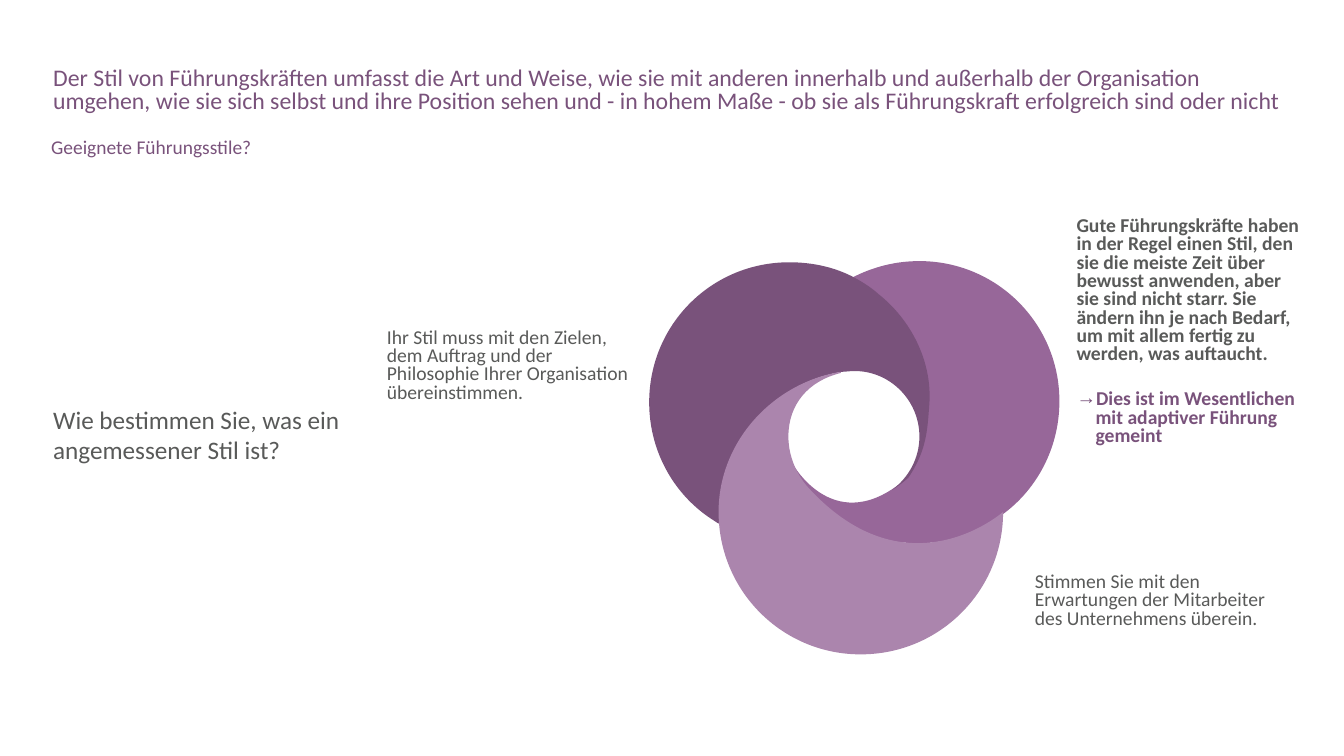
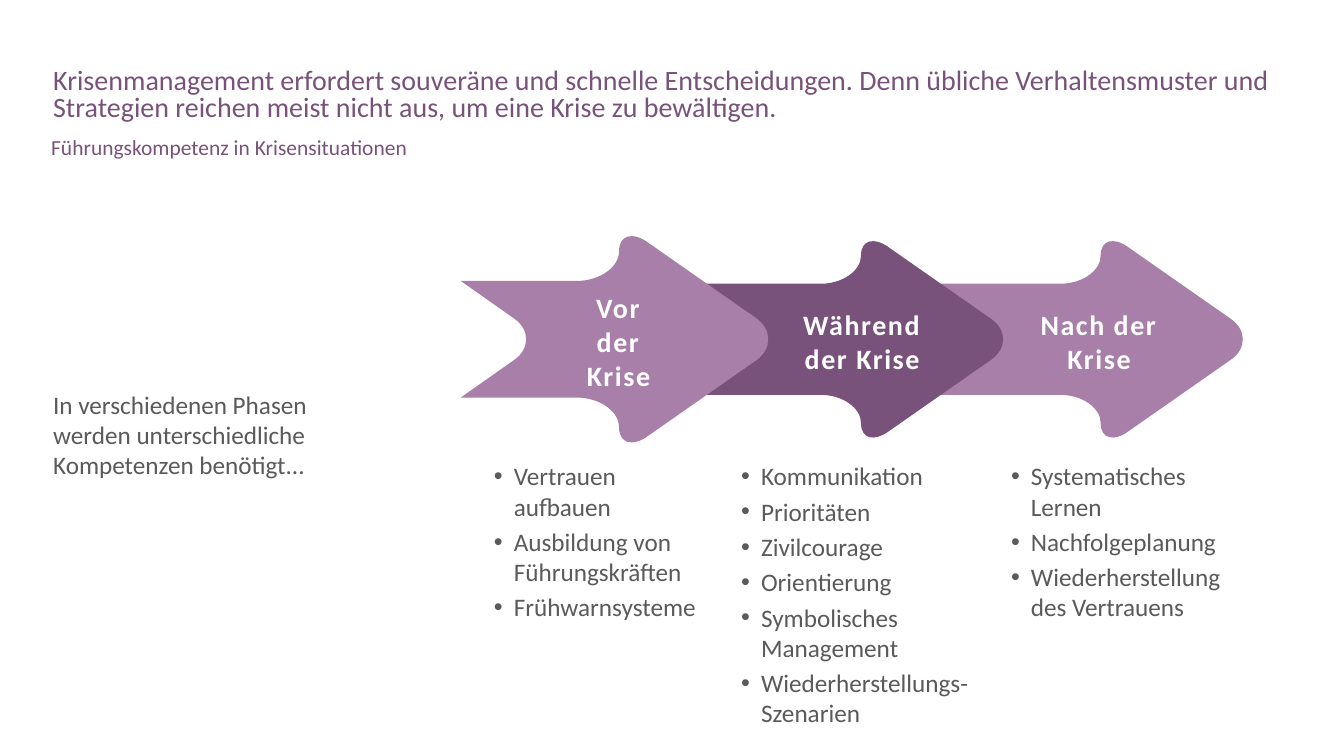
from lxml import etree
from pptx import Presentation
from pptx import util as u
from pptx.dml import color
from pptx.enum import text
from pptx.oxml import ns

FONT = "Calibri"
COLORS = {
    "dark": "79527B",
    "medium": "976799",
    "light": "AB85AD",
    "arrow": "A77FA9",
    "body": "595A59",
    "white": "FFFFFF",
}
SWIRL = [
    ("medium", (6.81, 0), [
        [(6.2, 0), (5.64, 0.15), (5.13, 0.41)],
        [(5.36, 0.53), (5.56, 0.66), (5.77, 0.84)],
        [(6.55, 1.47), (7.11, 2.51), (7.04, 3.61)],
        [(6.99, 4.22), (7.01, 4.75), (6.5, 5.46)],
        [(4.7, 7.04), (3.63, 5.13), (3.63, 5.13)],
        [(3.81, 6.15), (5.08, 6.73), (5.08, 6.73)],
        [(5.56, 6.99), (6.22, 7.11), (6.81, 7.11)],
        [(7.49, 7.11), (8.15, 6.88), (8.69, 6.53)],
        [(9.68, 5.92), (10.34, 4.8), (10.34, 3.53)],
        [(10.34, 1.57), (8.76, 0), (6.81, 0)],
    ]),
    ("dark", (4.85, 2.79), [
        [(4.95, 2.79), (5.05, 2.77), (5.18, 2.77)],
        [(6.07, 2.77), (6.81, 3.51), (6.81, 4.42)],
        [(6.81, 4.98), (6.53, 5.46), (6.12, 5.77)],
        [(6.25, 5.69), (6.38, 5.59), (6.53, 5.46)],
        [(7.01, 4.75), (7.01, 4.22), (7.06, 3.61)],
        [(7.14, 2.51), (6.58, 1.47), (5.79, 0.84)],
        [(5.59, 0.66), (5.38, 0.53), (5.16, 0.41)],
        [(4.67, 0.15), (4.11, 0.03), (3.53, 0.03)],
        [(1.57, 0.03), (0, 1.6), (0, 3.56)],
        [(0, 4.83), (0.66, 5.94), (1.65, 6.55)],
        [(1.7, 6.58), (1.75, 6.63), (1.8, 6.63)],
        [(1.78, 6.53), (1.78, 6.43), (1.78, 6.32)],
        [(1.78, 4.55), (3.15, 3.07), (4.85, 2.79)],
    ]),
    ("light", (4.04, 5.74), [
        [(4.04, 5.74), (3.51, 5.23), (3.51, 4.42)],
        [(3.51, 3.61), (4.01, 3.02), (4.83, 2.82)],
        [(4.83, 2.79)],
        [(3.12, 3.07), (1.75, 4.55), (1.75, 6.32)],
        [(1.75, 8.31), (3.35, 9.91), (5.33, 9.91)],
        [(7.32, 9.91), (8.92, 8.31), (8.92, 6.32)],
        [(8.92, 6.32), (6.53, 8.43), (4.04, 5.74)],
    ]),
]
HEAD = [
    [(0, -0.18), (-0.09, -0.36), (-0.28, -0.5)],
    [(-2.87, -2.31)],
    [(-3.25, -2.59), (-3.58, -2.51), (-3.58, -2.11)],
    [(-3.58, -1.73), (-4.04, -1.4), (-4.6, -1.4)],
]
ROUND_TAIL = [
    [(-7.59, -1.4)],
    [(-8.13, -1.4), (-8.61, -1.09), (-8.61, -0.71)],
    [(-8.61, 0)],
]
NOTCHED_TAIL = [
    [(-7.38, -1.4)],
    [(-6.1, -0.5)],
    [(-5.9, -0.36), (-5.81, -0.18), (-5.81, 0)],
]
PHASES = [
    {"label": "Vor der Krise", "center": 7.14, "label_size": (2.87, 1.96),
     "tip": 10.91, "scale": 1.05, "tail": NOTCHED_TAIL, "fill": "arrow",
     "box": (3.77, 5.69, 4.39),
     "items": ["Vertrauen aufbauen", "Ausbildung von Führungskräften",
               "Frühwarnsysteme"]},
    {"label": "Während der Krise", "center": 13.28, "label_size": (4.55, 1.12),
     "tip": 16.83, "scale": 1, "tail": ROUND_TAIL, "fill": "dark",
     "box": (10, 6.25, 7.16),
     "items": ["Kommunikation", "Prioritäten", "Zivilcourage", "Orientierung",
               "Symbolisches Management", "Wiederherstellungs-Szenarien"]},
    {"label": "Nach der Krise", "center": 19.25, "label_size": (4.04, 1.12),
     "tip": 22.87, "scale": 1, "tail": ROUND_TAIL, "fill": "arrow",
     "box": (16.8, 5.79, 4.39),
     "items": ["Systematisches Lernen", "Nachfolgeplanung",
               "Wiederherstellung des Vertrauens"]},
]


def rgb(name):
    """Return the named colour."""
    return color.RGBColor.from_string(COLORS[name])


def trace(start, segments, steps=24):
    """Sample lines and Bézier curves to find their extent."""
    points = [start]
    for segment in segments:
        if len(segment) == 1:
            points += segment
            continue
        corners = [points[-1], *segment]
        for step in range(1, steps + 1):
            t = step / steps
            weights = ((1 - t) ** 3, 3 * t * (1 - t) ** 2,
                       3 * t * t * (1 - t), t ** 3)
            points.append(tuple(
                sum(weight * corner[axis] for weight, corner in zip(weights, corners))
                for axis in (0, 1)))
    return points


def add_outline(slide, left, top, start, segments, fill):
    """Draw a filled outline of lines and curves relative to left, top."""
    xs, ys = zip(*trace(start, segments))
    x0, x1, y0, y1 = min(xs), max(xs), min(ys), max(ys)
    corners = [(u.Cm(left + x), u.Cm(top + y))
               for x, y in ((x0, y0), (x1, y0), (x1, y1))]
    builder = slide.shapes.build_freeform(*corners[0])
    builder.add_line_segments(corners[1:], close=True)
    shape = builder.convert_to_shape()
    outline = next(shape._element.iter(ns.qn("a:path")))
    for child in list(outline):
        outline.remove(child)
    tags = {1: "a:lnTo", 3: "a:cubicBezTo"}
    steps = [("a:moveTo", [start])]
    steps += [(tags[len(segment)], segment) for segment in segments]
    for tag, points in steps:
        command = etree.SubElement(outline, ns.qn(tag))
        for x, y in points:
            point = etree.SubElement(command, ns.qn("a:pt"))
            point.set("x", str(u.Cm(x - x0)))
            point.set("y", str(u.Cm(y - y0)))
    etree.SubElement(outline, ns.qn("a:close"))
    shape.shadow.inherit = False
    shape.fill.solid()
    shape.fill.fore_color.rgb = rgb(fill)
    shape.line.fill.background()


def add_bullet(paragraph, character, indent):
    """Give a paragraph a hanging bullet."""
    properties = paragraph._p.get_or_add_pPr()
    properties.set("marL", str(u.Cm(indent)))
    properties.set("indent", str(-u.Cm(indent)))
    etree.SubElement(properties, ns.qn("a:buFont")).set("typeface", "Arial")
    etree.SubElement(properties, ns.qn("a:buChar")).set("char", character)


def format_paragraph(paragraph, size, fill, bold=False, line=None, spacing=0):
    """Set line spacing and the font of every run."""
    if line:
        paragraph.line_spacing = line
    for run in paragraph.runs:
        run.font.name = FONT
        run.font.size = u.Pt(size)
        run.font.bold = bold
        run.font.color.rgb = rgb(fill)
        if spacing:
            run._r.get_or_add_rPr().set("spc", str(spacing))


def add_text(slide, box, lines, size, fill, bullet=None, gap=0, middle=False,
             insets=(0.25, 0.13), **style):
    """Add a wrapped text box with one paragraph per line."""
    shape = slide.shapes.add_textbox(*(u.Cm(length) for length in box))
    frame = shape.text_frame
    frame.word_wrap = True
    frame.margin_left = frame.margin_right = u.Cm(insets[0])
    frame.margin_top = frame.margin_bottom = u.Cm(insets[1])
    if middle:
        frame.vertical_anchor = text.MSO_ANCHOR.MIDDLE
    frame.text = "\n".join(lines)
    for index, paragraph in enumerate(frame.paragraphs):
        if bullet:
            add_bullet(paragraph, bullet, 0.5)
        if index and gap:
            paragraph.space_before = u.Pt(gap)
        format_paragraph(paragraph, size, fill, **style)
    return frame


def add_base(presentation, title, title_size, subtitle, subtitle_size, statement):
    """Add a slide with title, subtitle and the statement on the left."""
    slide = presentation.slides.add_slide(presentation.slide_layouts[6])
    add_text(slide, (1.09, 4.55, 8.86, 12.8), [statement], 18, "body", middle=True)
    add_text(slide, (1.09, 1.6, 31.85, 1.63), [title], title_size, "dark", line=0.8)
    add_text(slide, (1.04, 3.43, 31.9, 0.71), [subtitle], subtitle_size, "dark",
             line=0.7)
    return slide


def add_callout(slide, box, content, bold=False):
    """Add a tightly set note beside the swirl."""
    return add_text(slide, box, [content], 14, "body", insets=(0.1, 0.05),
                    bold=bold, line=u.Pt(13.1))


def add_swirl(slide, left, top):
    """Draw three interlocking blades with notes around them."""
    for fill, start, segments in SWIRL:
        add_outline(slide, left, top, start, segments, fill)
    frame = add_callout(
        slide, (left + 10.67, top - 1.13, 5.92, 6.5),
        "Gute Führungskräfte haben in der Regel einen Stil, den sie die meiste "
        "Zeit über bewusst anwenden, aber sie sind nicht starr. Sie ändern ihn "
        "je nach Bedarf, um mit allem fertig zu werden, was auftaucht.", bold=True)
    conclusion = frame.add_paragraph()
    conclusion.text = "Dies ist im Wesentlichen mit adaptiver Führung gemeint"
    add_bullet(conclusion, "→", 0.48)
    conclusion.space_before = u.Pt(19)
    format_paragraph(conclusion, 14, "dark", bold=True, line=u.Pt(13.1))
    add_callout(slide, (left + 9.62, top + 7.84, 6.58, 1.5),
                "Stimmen Sie mit den Erwartungen der Mitarbeiter des "
                "Unternehmens überein.")
    add_callout(slide, (left - 6.71, top + 1.68, 6.55, 1.96),
                "Ihr Stil muss mit den Zielen, dem Auftrag und der Philosophie "
                "Ihrer Organisation übereinstimmen.")


def add_arrow(slide, tip, middle, scale, tail, fill):
    """Draw an arrow, mirrored about its axis, ending at tip."""
    upper = [[(x * scale, y * scale) for x, y in segment]
             for segment in HEAD + tail]
    starts = [(0, 0)] + [segment[-1] for segment in upper[:-1]]
    lower = [[(x, -y) for x, y in reversed([start, *segment[:-1]])]
             for start, segment in reversed(list(zip(starts, upper)))]
    add_outline(slide, tip, middle, (0, 0), upper + lower, fill)


def add_phases(slide, left, middle):
    """Draw the chain of phase arrows with labels and lists below."""
    for phase in reversed(PHASES):
        add_arrow(slide, left + phase["tip"], middle, phase["scale"],
                  phase["tail"], phase["fill"])
    for phase in PHASES:
        width, height = phase["label_size"]
        frame = add_text(
            slide, (left + phase["center"] - width / 2,
                    middle + 0.05 - height / 2, width, height),
            [phase["label"]], 20, "white", middle=True, insets=(0.4, 0.13),
            bold=True, spacing=110)
        frame.paragraphs[0].alignment = text.PP_ALIGN.CENTER
        offset, width, height = phase["box"]
        add_text(slide, (left + offset, middle + 2.96, width, height),
                 phase["items"], 18, "body", bullet="•", gap=3.6,
                 insets=(0.23, 0.1))


def main():
    """Build and save the presentation."""
    presentation = Presentation()
    presentation.slide_width = u.Cm(33.87)
    presentation.slide_height = u.Cm(19.05)
    styles = add_base(
        presentation,
        "Der Stil von Führungskräften umfasst die Art und Weise, wie sie mit "
        "anderen innerhalb und außerhalb der Organisation umgehen, wie sie sich "
        "selbst und ihre Position sehen und - in hohem Maße - ob sie als "
        "Führungskraft erfolgreich sind oder nicht", 17,
        "Geeignete Führungsstile?", 13.9,
        "Wie bestimmen Sie, was ein angemessener Stil ist?")
    add_swirl(styles, 16.36, 6.58)
    crisis = add_base(
        presentation,
        "Krisenmanagement erfordert souveräne und schnelle Entscheidungen. Denn "
        "übliche Verhaltensmuster und Strategien reichen meist nicht aus, um "
        "eine Krise zu bewältigen.", 20,
        "Führungskompetenz in Krisensituationen", 15.3,
        "In verschiedenen Phasen werden unterschiedliche Kompetenzen benötigt...")
    add_phases(crisis, 8.45, 8.55)
    presentation.save("out.pptx")


if __name__ == "__main__":
    main()
